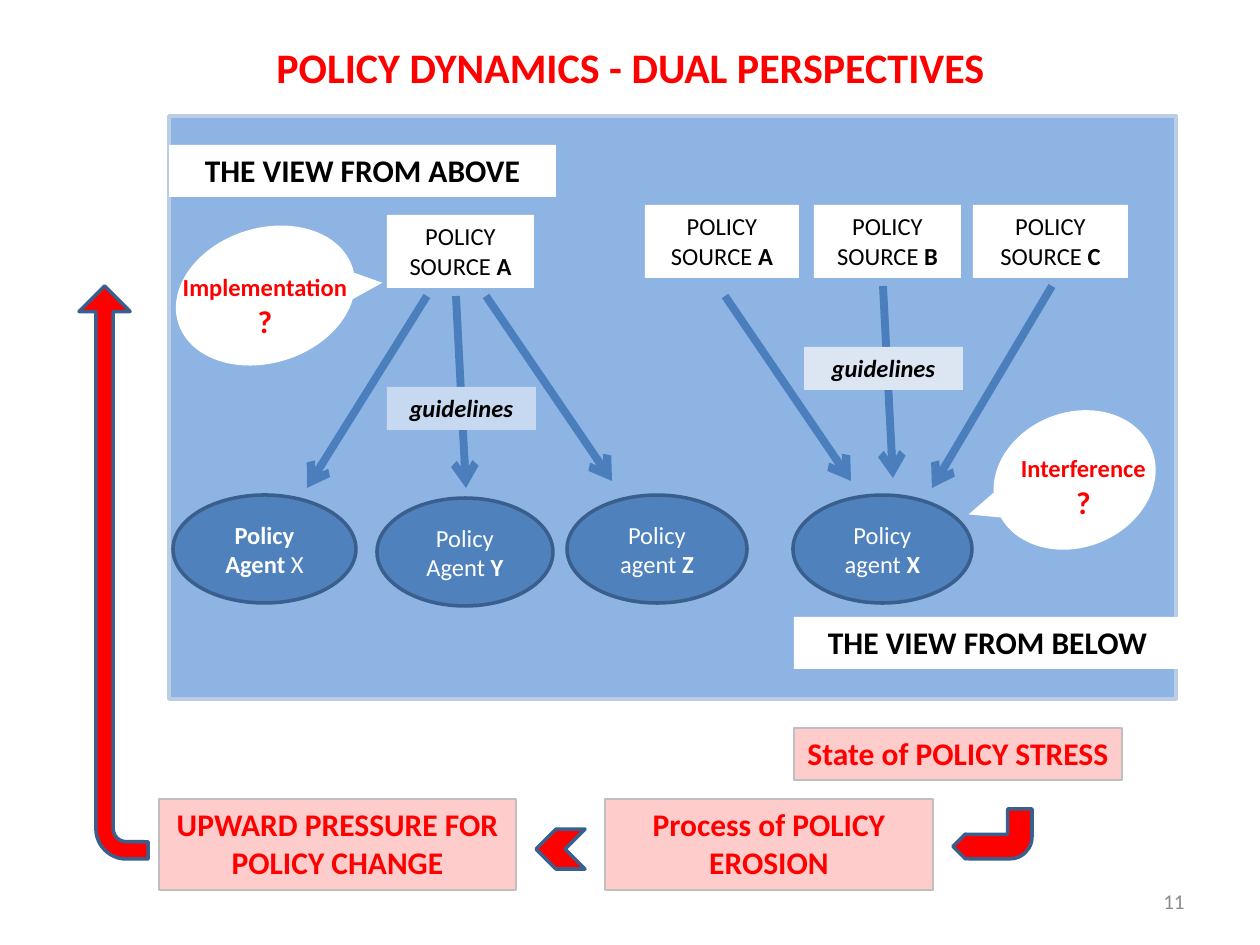
from dataclasses import dataclass
from lxml.etree import SubElement
from pptx import Presentation
from pptx.dml.color import RGBColor
from pptx.enum.shapes import MSO_CONNECTOR as Link, MSO_SHAPE as Kind
from pptx.enum.text import MSO_ANCHOR as Anchor, PP_ALIGN as Align
from pptx.oxml.ns import qn
from pptx.util import Pt

PX = 914400 / 126


@dataclass(frozen=True)
class Theme:
    font: str = "Calibri"
    red: str = "FF0000"
    pink: str = "FFCCCC"
    white: str = "FFFFFF"
    black: str = "000000"
    grey: str = "8C8C8C"
    rim: str = "BFBFBF"
    panel: str = "8EB4E3"
    frame: str = "B9CDE5"
    agent: str = "4F81BD"
    edge: str = "3A5F8C"
    arrow: str = "4B7EBC"
    title: int = 24
    head: int = 18
    body: int = 14
    small: int = 12


T = Theme()


def emu(*vals):
    return [round(v * PX) for v in vals]


def write(shape, *lines, size=T.body, color=T.black, bold=False, italic=False,
          align=Align.CENTER, anchor=Anchor.TOP, wrap=True, sizes=()):
    """Fill a shape with paragraphs; text between asterisks is bold."""
    frame = shape.text_frame
    frame.word_wrap = wrap
    frame.vertical_anchor = anchor
    for i, line in enumerate(lines):
        para = frame.add_paragraph() if i else frame.paragraphs[0]
        para.alignment = align
        for j, part in enumerate(line.split("*")):
            if not part:
                continue
            run = para.add_run()
            run.text = part
            font = run.font
            font.name = T.font
            font.size = Pt(sizes[i] if sizes else size)
            font.bold = bold or j % 2 == 1
            font.italic = italic
            font.color.rgb = RGBColor.from_string(color)


def draw(slide, box, at, fill, kind=Kind.RECTANGLE, line=None, width=2,
         turn=0, adj=()):
    x, y, w, h = at
    shape = slide.shapes.add_shape(kind, *emu(box[0] + x, box[1] + y, w, h))
    shape.shadow.inherit = False
    shape.rotation = turn
    for i, val in enumerate(adj):
        shape.adjustments[i] = val
    shape.fill.solid()
    shape.fill.fore_color.rgb = RGBColor.from_string(fill)
    if line:
        shape.line.color.rgb = RGBColor.from_string(line)
        shape.line.width = Pt(width)
    else:
        shape.line.fill.background()
    return shape


def label(slide, box, at, *lines, **style):
    x, y, w, h = at
    area = slide.shapes.add_textbox(*emu(box[0] + x, box[1] + y, w, h))
    write(area, *lines, **style)


def arrow(slide, box, ends):
    x1, y1, x2, y2 = ends
    x, y = box[:2]
    link = slide.shapes.add_connector(
        Link.STRAIGHT, *emu(x + x1, y + y1, x + x2, y + y2))
    link.line.color.rgb = RGBColor.from_string(T.arrow)
    link.line.width = Pt(4.5)
    SubElement(link.line._get_or_add_ln(), qn("a:tailEnd"), type="arrow")
    SubElement(link._element.spPr, qn("a:effectLst"))


def view(slide, box, head, agents, sources, arrows, guide, bubble, query):
    """One perspective: sources, arrows and agents, with a question bubble."""
    # Agents
    for at, lines in agents:
        shape = draw(slide, box, at, T.agent, Kind.OVAL, T.edge)
        write(shape, *lines, color=T.white, anchor=Anchor.MIDDLE)
    # Sources
    for at, name in sources:
        write(draw(slide, box, at, T.white), f"POLICY SOURCE *{name}*")
    # Arrows
    for ends in arrows:
        arrow(slide, box, ends)
    # Question
    at, turn, adj = bubble
    draw(slide, box, at, T.white, Kind.OVAL_CALLOUT, turn=turn, adj=adj)
    at, word = query
    label(slide, box, at, word, "?", color=T.red, bold=True,
          sizes=(T.body, T.head))
    # Guidelines and heading
    at, fill = guide
    write(draw(slide, box, at, fill), "guidelines", bold=True, italic=True)
    at, text = head
    write(draw(slide, box, at, T.white), text, size=T.head, bold=True)


def above(slide, box):
    view(slide, box,
         head=((0, 29, 387, 52), "THE VIEW FROM ABOVE"),
         agents=[((4, 379, 183, 108), ("*Policy*", "*Agent *X")),
                 ((208, 382, 176, 108), ("Policy Agent *Y*",)),
                 ((398, 379, 180, 108), ("Policy agent *Z*",))],
         sources=[((218, 99, 147, 73), "A")],
         arrows=[(258, 180, 138, 372), (287, 180, 297, 372),
                 (317, 180, 443, 365)],
         guide=((218, 271, 149, 43), "C6D9F1"),
         bubble=((29, 88, 135, 183), 252.5, (-0.17, 0.63)),
         query=((-10, 150, 212, 82), "Implementation"))


def below(slide, box):
    view(slide, box,
         head=((149, 501, 387, 52), "THE VIEW FROM BELOW"),
         agents=[((148, 379, 179, 108), ("Policy agent *X*",))],
         sources=[((0, 89, 154, 73), "A"), ((169, 89, 147, 73), "B"),
                  ((328, 89, 155, 73), "C")],
         arrows=[(80, 180, 206, 365), (238, 170, 248, 362),
                 (407, 170, 287, 372)],
         guide=((159, 231, 159, 43), "DCE6F2"),
         bubble=((362, 281, 135, 166), 68.5, (-0.05, 0.67)),
         query=((358, 331, 161, 82), "Interference"))


def cycle(slide, box):
    """Steps from stress back up to policy change."""
    # Steps
    for at, text, wrap in [
            ((715, 442, 328, 52), "State of POLICY STRESS", False),
            ((526, 513, 328, 91), "Process of POLICY EROSION", True),
            ((80, 513, 357, 91), "UPWARD PRESSURE FOR POLICY CHANGE", True)]:
        write(draw(slide, box, at, T.pink, line=T.rim, width=0.75), text,
              size=T.head, color=T.red, bold=True, wrap=wrap)
    # Arrows between the steps
    for at, kind, turn, adj in [
            ((457, 543, 49, 40), Kind.CHEVRON, 180, ()),
            ((874, 523, 79, 50), Kind.BENT_ARROW, 180,
             (0.49, 0.25, 0.25, 0.44)),
            ((-252, 252, 573, 69), Kind.BENT_ARROW, 270,
             (0.25, 0.37, 0.37, 0.44))]:
        draw(slide, box, at, T.red, kind, T.edge, turn=turn, adj=adj)


def main():
    deck = Presentation()
    deck.slide_width, deck.slide_height = emu(1260, 945)
    slide = deck.slides.add_slide(deck.slide_layouts[6])
    page = (0, 0, 1260, 945)
    # Title and page number
    label(slide, page, (95, 37, 1071, 59), "POLICY DYNAMICS - DUAL PERSPECTIVES",
          size=T.title, color=T.red, bold=True, anchor=Anchor.MIDDLE)
    label(slide, page, (903, 876, 294, 50), "11", size=T.small, color=T.grey,
          align=Align.RIGHT, anchor=Anchor.MIDDLE)
    # Panel with both views
    draw(slide, page, (169, 116, 1007, 583), T.panel, line=T.frame)
    above(slide, (169, 116, 578, 583))
    below(slide, (645, 116, 536, 583))
    cycle(slide, (79, 286, 1043, 604))
    deck.save("out.pptx")


if __name__ == "__main__":
    main()
